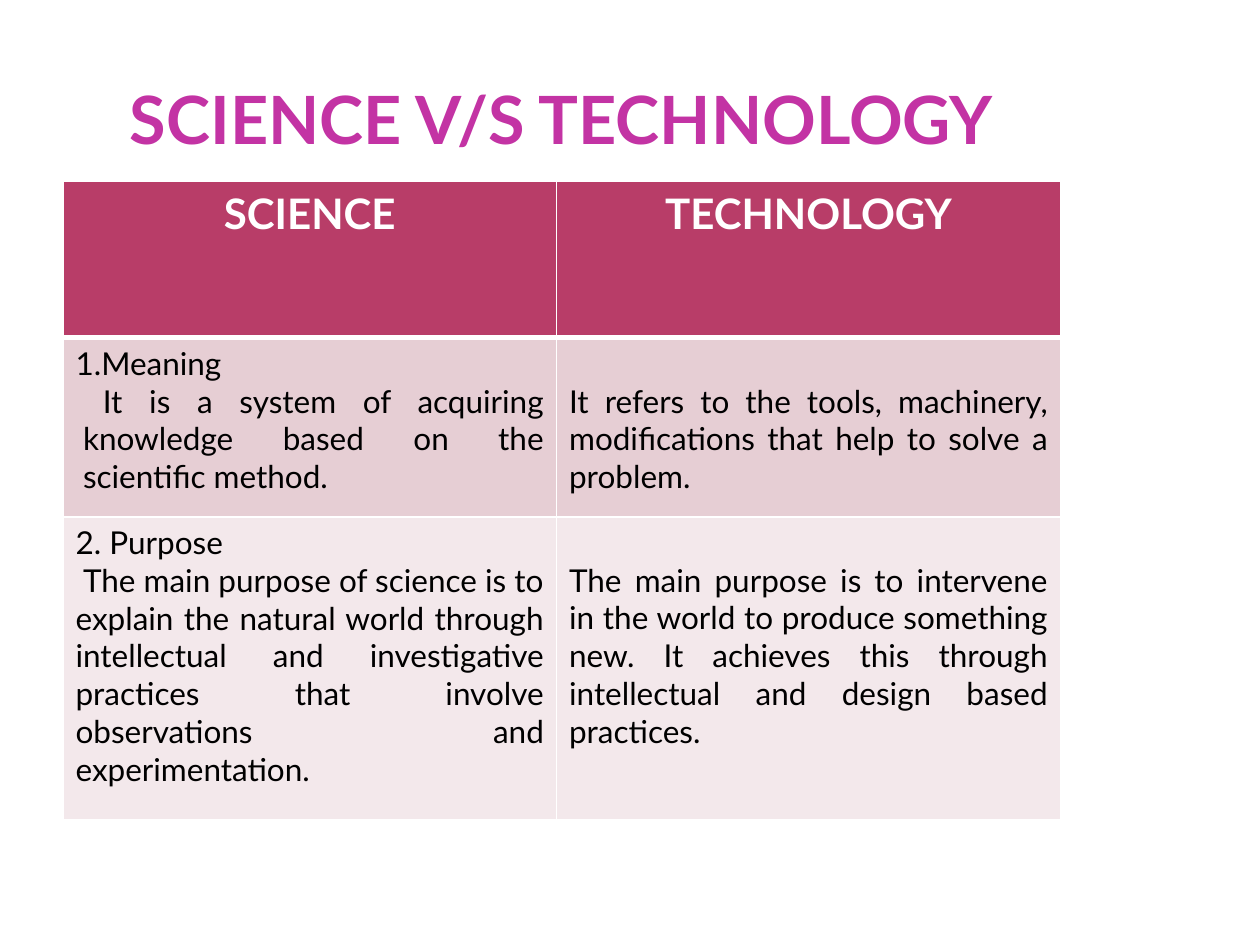
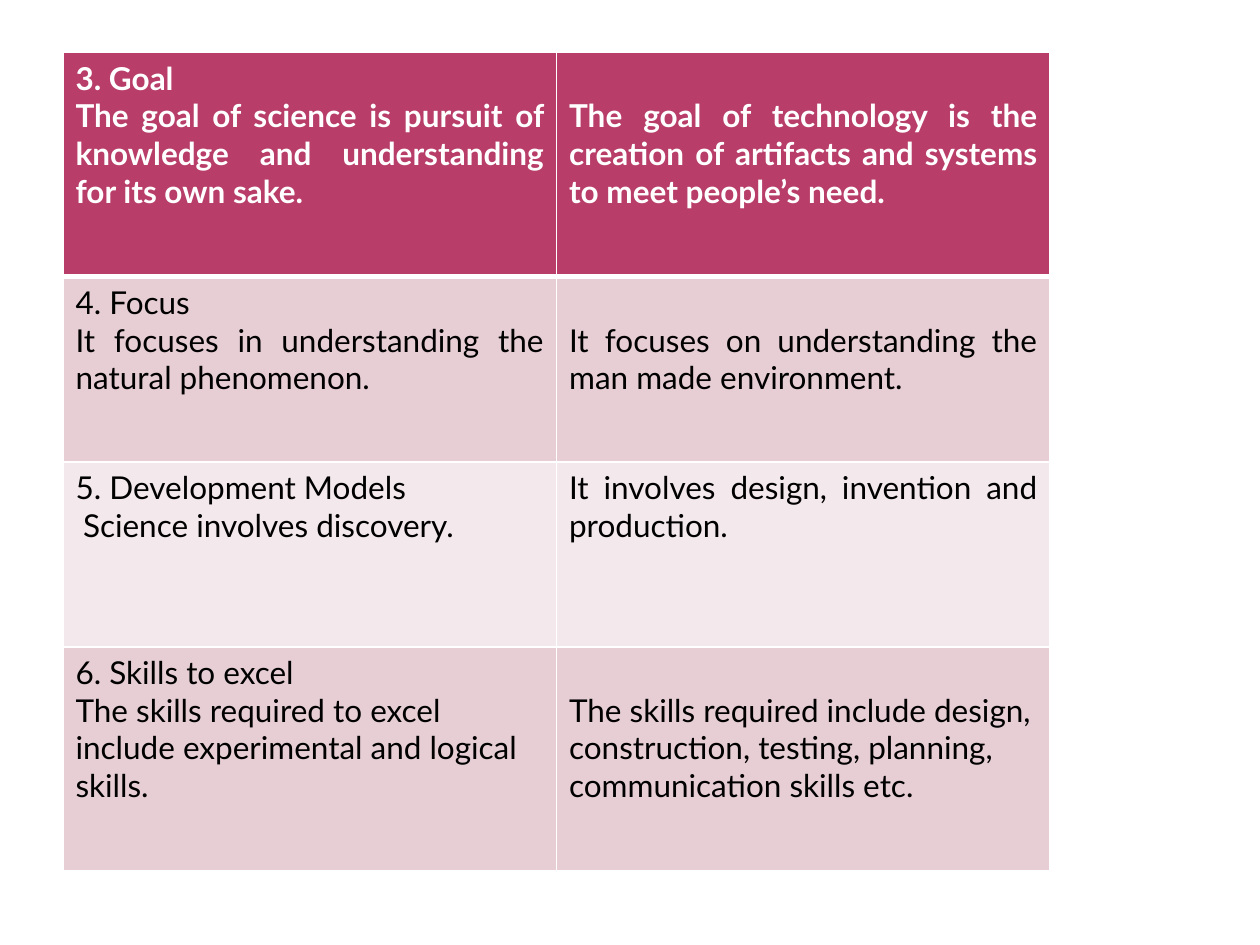
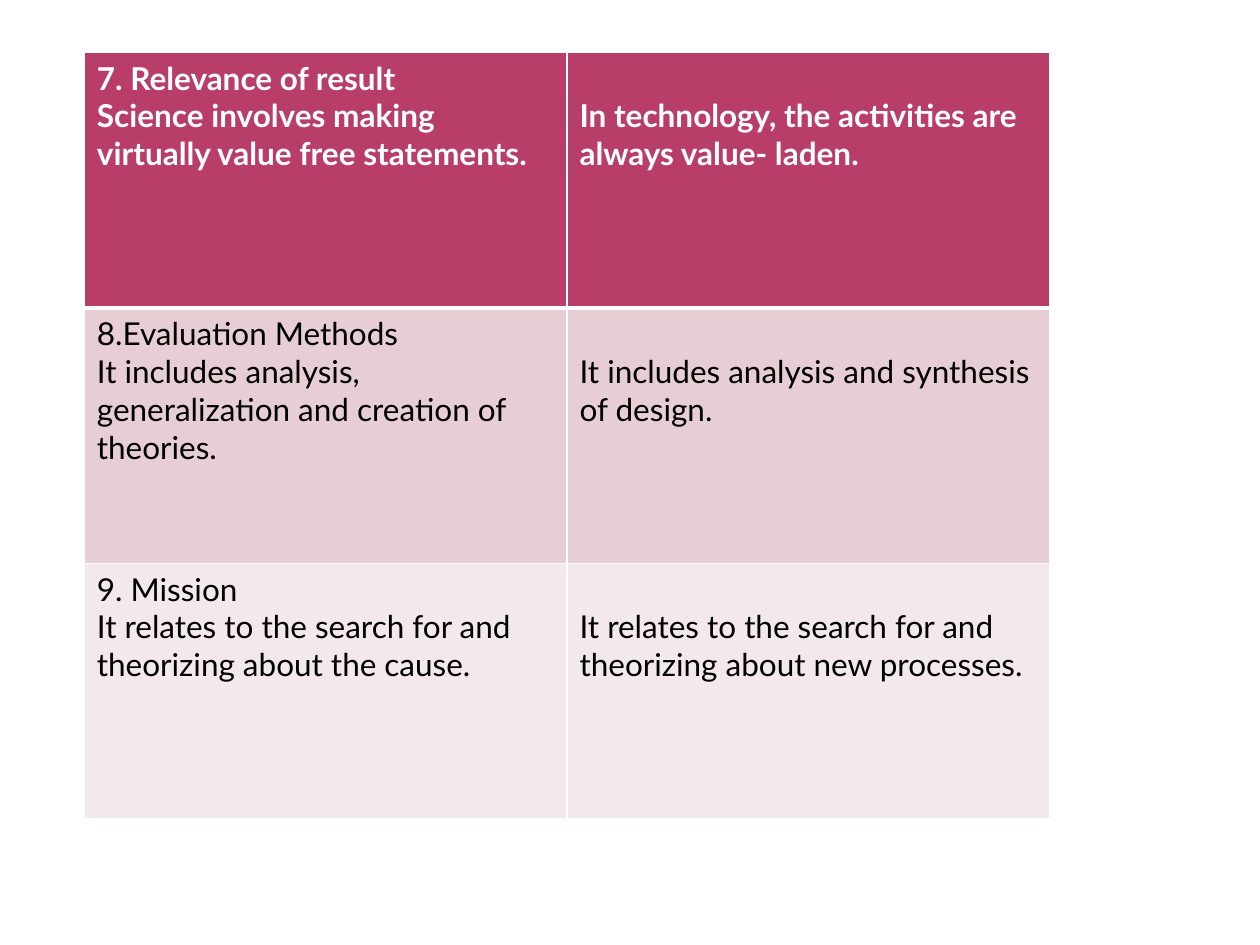
from dataclasses import dataclass

import pptx
import pptx.dml.color
import pptx.enum.text
import pptx.oxml
import pptx.oxml.ns
import pptx.util
from pptx.util import Cm

# Shared look
FONT = "Lato"
TITLE_COLOR = "C333A4"
HEADER_FILL = "B83D68"
BAND_FILLS = ("E6CED4", "F3E8EB")
WHITE = "FFFFFF"
BLACK = "000000"
BORDER, HEADER_BORDER = 1, 3
TOP_MARGIN = Cm(0.13)
TEXT_LINE = Cm(0.76)

ALIGN = pptx.enum.text.PP_ALIGN
LEFT, CENTER, JUSTIFY = ALIGN.LEFT, ALIGN.CENTER, ALIGN.JUSTIFY


@dataclass
class Line:
    text: str
    left: float = 0
    first: float = 0


@dataclass
class Comparison:
    """One table row: the science lines and the technology line."""
    science: list[Line]
    technology: str
    height: float
    align: ALIGN = JUSTIFY
    size: int = 18
    lowered: bool = True


@dataclass
class ComparisonTable:
    left: float
    top: float
    widths: tuple[float, float]
    rows: list[Comparison]
    title: str = ""


TABLES = [
    ComparisonTable(1.27, 3.66, (9.95, 10.16), [
        Comparison([Line("SCIENCE")], "TECHNOLOGY", 3.15, CENTER, 24, lowered=False),
        Comparison(
            [Line("1.Meaning"),
             Line("It is a system of acquiring knowledge based on the scientific method.", 0.15, 0.4)],
            "It refers to the tools, machinery, modifications that help to solve a problem.", 3.61),
        Comparison(
            [Line("2. Purpose"),
             Line("The main purpose of science is to explain the natural world through intellectual and "
                  "investigative practices that involve observations and experimentation.", 0, 0.15)],
            "The main purpose is to intervene in the world to produce something new. "
            "It achieves this through intellectual and design based practices.", 6.1),
    ], title="SCIENCE V/S TECHNOLOGY"),
    ComparisonTable(1.27, 1.06, (9.95, 9.95), [
        Comparison(
            [Line("3. Goal"),
             Line("The goal of science is pursuit of knowledge and understanding for its own sake.")],
            "The goal of technology is the creation of artifacts and systems to meet people’s need.", 4.52),
        Comparison(
            [Line("4. Focus"), Line("It focuses in understanding the natural phenomenon.")],
            "It focuses on understanding the man made environment.", 3.73),
        Comparison(
            [Line("5. Development Models"), Line("Science involves discovery.", 0, 0.15)],
            "It involves design, invention and production.", 3.73, lowered=False),
        Comparison(
            [Line("6. Skills to excel"),
             Line("The skills required to excel include experimental and logical skills.")],
            "The skills required include design, construction, testing, planning, communication skills etc.",
            4.52, LEFT),
    ]),
    ComparisonTable(1.7, 1.06, (9.73, 9.73), [
        Comparison(
            [Line("7. Relevance of result"),
             Line("Science involves making virtually value free statements.")],
            "In technology, the activities are always value- laden.", 5.15, LEFT),
        Comparison(
            [Line("8.Evaluation Methods"),
             Line("It includes analysis, generalization and creation of theories.")],
            "It includes analysis and synthesis of design.", 5.15, LEFT),
        Comparison(
            [Line("9. Mission"),
             Line("It relates to the search for and theorizing about the cause.")],
            "It relates to the search for and theorizing about new processes.", 5.15, LEFT),
    ]),
]


def rgb(color: str) -> pptx.dml.color.RGBColor:
    return pptx.dml.color.RGBColor.from_string(color)


def apply_format(target, values: dict) -> None:
    for name, value in values.items():
        setattr(target, name, value)


def write_lines(text_frame, lines: list[Line], align: ALIGN, size: int, color: str, bold: bool) -> None:
    for index, line in enumerate(lines):
        paragraph = text_frame.add_paragraph() if index else text_frame.paragraphs[0]
        paragraph.alignment = align
        if line.left or line.first:
            properties = paragraph._p.get_or_add_pPr()
            properties.set("marL", str(Cm(line.left)))
            properties.set("indent", str(Cm(line.first)))
        run = paragraph.add_run()
        run.text = line.text
        apply_format(run.font, {"name": FONT, "size": pptx.util.Pt(size), "bold": bold})
        run.font.color.rgb = rgb(color)


def set_borders(cell, top: float, bottom: float) -> None:
    properties = cell._tc.get_or_add_tcPr()
    widths = {"lnL": BORDER, "lnR": BORDER, "lnT": top, "lnB": bottom}
    for tag, width in widths.items():
        properties.append(pptx.oxml.parse_xml(
            f'<a:{tag} {pptx.oxml.ns.nsdecls("a")} w="{pptx.util.Pt(width)}">'
            f'<a:solidFill><a:srgbClr val="{WHITE}"/></a:solidFill></a:{tag}>'))


def add_title(slide, text: str) -> None:
    title = slide.shapes.title
    apply_format(title, {"left": Cm(1.27), "top": Cm(0.89), "width": Cm(20.11), "height": Cm(2.29)})
    apply_format(title.text_frame, {
        "margin_left": Cm(0.13), "margin_right": Cm(0.13), "margin_top": 0, "margin_bottom": 0,
        "word_wrap": True, "auto_size": pptx.enum.text.MSO_AUTO_SIZE.NONE,
        "vertical_anchor": pptx.enum.text.MSO_ANCHOR.BOTTOM,
    })
    write_lines(title.text_frame, [Line(text)], CENTER, 38, TITLE_COLOR, True)


def add_comparison_table(slide, content: ComparisonTable) -> None:
    frame = slide.shapes.add_table(
        len(content.rows), len(content.widths), Cm(content.left), Cm(content.top),
        Cm(sum(content.widths)), Cm(sum(row.height for row in content.rows)))
    table = frame.table
    apply_format(table, {"first_row": False, "horz_banding": False})
    for column, width in zip(table.columns, content.widths):
        column.width = Cm(width)

    for index, row in enumerate(content.rows):
        table.rows[index].height = Cm(row.height)
        header = index == 0
        fill = HEADER_FILL if header else BAND_FILLS[(index - 1) % 2]
        for column, lines in enumerate((row.science, [Line(row.technology)])):
            cell = table.cell(index, column)
            set_borders(cell, HEADER_BORDER if index == 1 else BORDER,
                        HEADER_BORDER if header else BORDER)
            cell.fill.solid()
            cell.fill.fore_color.rgb = rgb(fill)
            # The technology text starts level with the line under the science heading
            lowered = column == 1 and row.lowered
            cell.margin_top = TOP_MARGIN + (TEXT_LINE if lowered else 0)
            write_lines(cell.text_frame, lines, row.align, row.size,
                        WHITE if header else BLACK, header)


def main() -> None:
    presentation = pptx.Presentation()
    apply_format(presentation, {"slide_width": Cm(25.4), "slide_height": Cm(19.05)})
    title_only, blank = presentation.slide_layouts[5], presentation.slide_layouts[6]
    for content in TABLES:
        slide = presentation.slides.add_slide(title_only if content.title else blank)
        if content.title:
            add_title(slide, content.title)
        add_comparison_table(slide, content)
    presentation.save("out.pptx")


if __name__ == "__main__":
    main()
